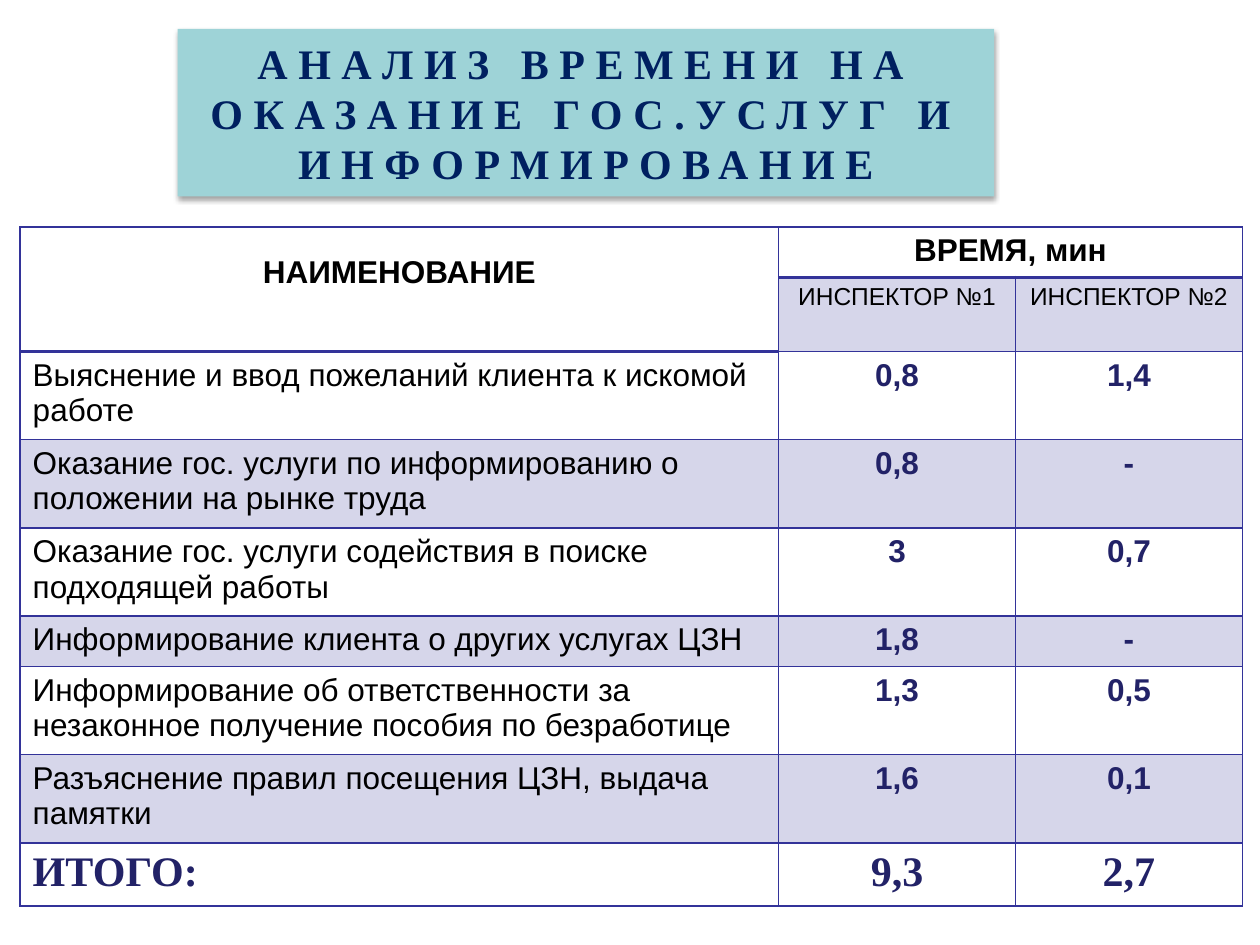
"""Build a slide with a title banner and a table of service times."""
from lxml import etree
from pptx import Presentation
from pptx.dml.color import RGBColor
from pptx.enum.shapes import MSO_SHAPE
from pptx.enum.text import MSO_ANCHOR, PP_ALIGN
from pptx.oxml import parse_xml
from pptx.oxml.ns import nsdecls, qn
from pptx.util import Inches, Pt

LEFT, CENTER = PP_ALIGN.LEFT, PP_ALIGN.CENTER
MIDDLE, RECTANGLE = MSO_ANCHOR.MIDDLE, MSO_SHAPE.RECTANGLE
TEAL = RGBColor(0x9E, 0xD3, 0xD7)
NAVY = RGBColor(0x00, 0x20, 0x60)
INDIGO = RGBColor(0x33, 0x33, 0x99)
DEEP_BLUE = RGBColor(0x22, 0x22, 0x67)
BLACK = RGBColor(0, 0, 0)
SANS, SERIF = "Arial", "Times New Roman"

TITLE = "АНАЛИЗ ВРЕМЕНИ НА ОКАЗАНИЕ ГОС.УСЛУГ И ИНФОРМИРОВАНИЕ"
ROWS = [
    ("НАИМЕНОВАНИЕ", "ВРЕМЯ, мин", None),
    (None, "ИНСПЕКТОР №1", "ИНСПЕКТОР №2"),
    ("Выяснение и ввод пожеланий клиента к искомой работе", "0,8", "1,4"),
    ("Оказание гос. услуги по информированию о положении на рынке труда", "0,8", "-"),
    ("Оказание гос. услуги содействия в поиске подходящей работы", "3", "0,7"),
    ("Информирование клиента о других услугах ЦЗН", "1,8", "-"),
    ("Информирование об ответственности за незаконное получение пособия по безработице",
     "1,3", "0,5"),
    ("Разъяснение правил посещения ЦЗН, выдача памятки", "1,6", "0,1"),
    ("ИТОГО:", "9,3", "2,7"),
]
COLUMN_WIDTHS = [6.02, 1.88, 1.8]
ROW_HEIGHTS = [0.4, 0.59, 0.7, 0.7, 0.7, 0.4, 0.7, 0.7, 0.5]
HEAVY_BOTTOMS = {(0, 1), (0, 2), (1, 0)}
TOTAL_ROW = len(ROWS) - 1


def write(frame, text, size, font, color, bold, align):
    para = frame.paragraphs[0]
    para.alignment = align
    span = para.add_run()
    span.text = text
    span.font.size = Pt(size)
    span.font.name = font
    span.font.bold = bold
    span.font.color.rgb = color
    return span


def text_style(row, column):
    if row == 0:
        return 18, SANS, BLACK, True, CENTER
    if row == 1:
        return 14, SANS, BLACK, False, CENTER
    align = CENTER if column else LEFT
    if row == TOTAL_ROW:
        return 24, SERIF, DEEP_BLUE, True, align
    return 18, SANS, DEEP_BLUE if column else BLACK, bool(column), align


def set_borders(cell, row, column):
    top = 2 if (row - 1, column) in HEAVY_BOTTOMS else 1
    bottom = 2 if (row, column) in HEAVY_BOTTOMS else 1
    properties = cell._tc.get_or_add_tcPr()
    for side, width in (("L", 1), ("R", 1), ("T", top), ("B", bottom)):
        properties.append(parse_xml(
            f'<a:ln{side} {nsdecls("a")} w="{Pt(width)}"><a:solidFill>'
            f'<a:srgbClr val="{INDIGO}"/></a:solidFill></a:ln{side}>'))


def set_fill(cell, tinted):
    if not tinted:
        cell.fill.background()
        return
    cell.fill.solid()
    cell.fill.fore_color.rgb = INDIGO
    color = cell._tc.tcPr.find(qn("a:solidFill")).find(qn("a:srgbClr"))
    etree.SubElement(color, qn("a:alpha")).set("val", "20000")


def add_title(page):
    banner = page.shapes.add_shape(
        RECTANGLE, Inches(1.41), Inches(0.23), Inches(6.48), Inches(1.33))
    banner.fill.solid()
    banner.fill.fore_color.rgb = TEAL
    banner.line.fill.background()
    banner.shadow.inherit = False
    effects = banner._element.spPr.find(qn("a:effectLst"))
    effects.append(parse_xml(
        f'<a:outerShdw {nsdecls("a")} blurRad="{Pt(3.1)}" dist="{Pt(1.8)}" dir="5400000" '
        'rotWithShape="0"><a:srgbClr val="000000"><a:alpha val="35000"/></a:srgbClr>'
        '</a:outerShdw>'))
    frame = banner.text_frame
    frame.word_wrap = True
    frame.vertical_anchor = MIDDLE
    span = write(frame, TITLE, 24, SERIF, NAVY, True, CENTER)
    span.font._element.set("spc", "600")


def add_times(page):
    table = page.shapes.add_table(
        len(ROWS), len(COLUMN_WIDTHS), Inches(0.16), Inches(1.8),
        Inches(sum(COLUMN_WIDTHS)), Inches(sum(ROW_HEIGHTS))).table
    table.first_row = table.horz_banding = False
    for column, width in zip(table.columns, COLUMN_WIDTHS):
        column.width = Inches(width)
    for row, height in zip(table.rows, ROW_HEIGHTS):
        row.height = Inches(height)
    for r, texts in enumerate(ROWS):
        for c, text in enumerate(texts):
            cell = table.cell(r, c)
            set_borders(cell, r, c)
            set_fill(cell, r % 2 == 1 and text is not None)
            if text is not None:
                write(cell.text_frame, text, *text_style(r, c))
    table.cell(0, 0).merge(table.cell(1, 0))
    table.cell(0, 1).merge(table.cell(0, 2))
    table.cell(0, 0).margin_top = Inches(0.22)


def main():
    deck = Presentation()
    deck.slide_width, deck.slide_height = Inches(10), Inches(7.5)
    page = deck.slides.add_slide(deck.slide_layouts[6])
    add_title(page)
    add_times(page)
    deck.save("out.pptx")


if __name__ == "__main__":
    main()
